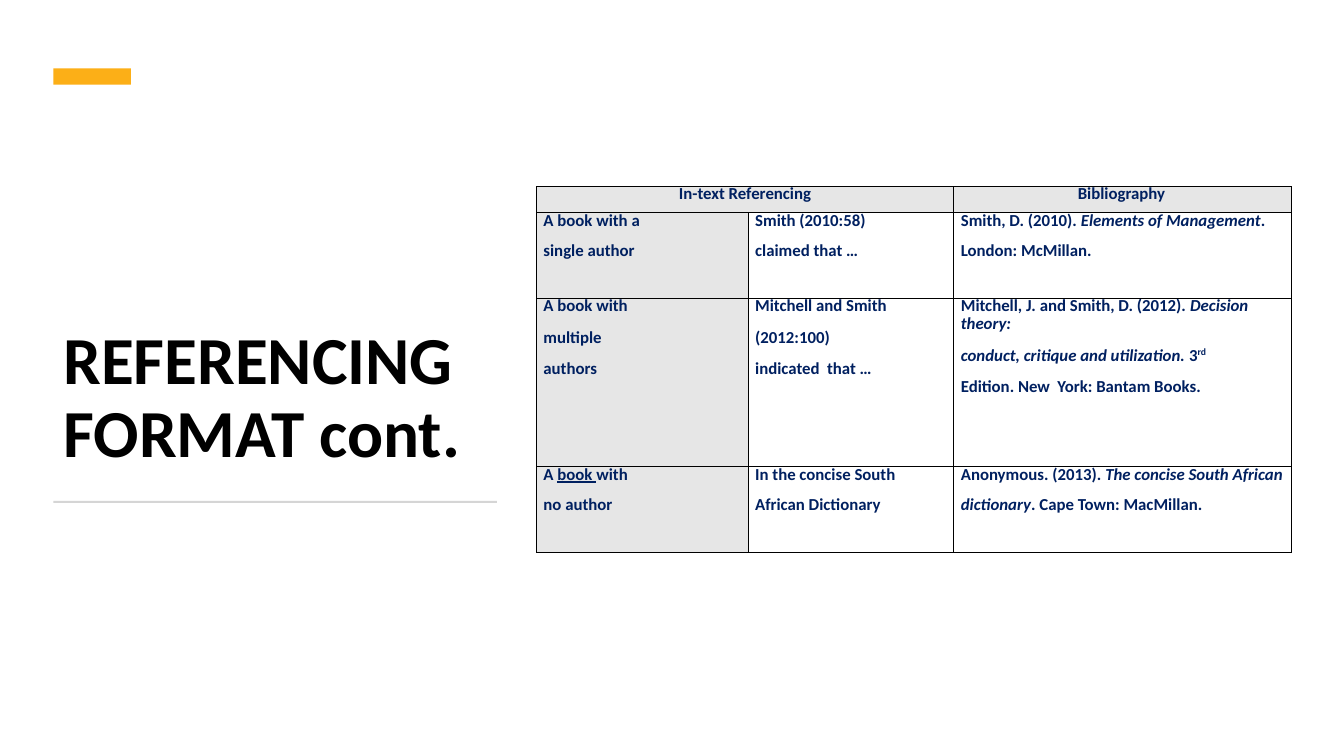
from lxml import etree
from pptx import Presentation
from pptx.dml.color import RGBColor
from pptx.enum.shapes import MSO_SHAPE as Shape
from pptx.enum.text import MSO_ANCHOR as Anchor, PP_ALIGN as Align
from pptx.oxml.ns import qn
from pptx.util import Inches, Pt

HUES = {"accent": "FCAF17", "rule": "D5D5D5", "title": "000000",
        "text": "002060", "shade": "E6E6E6", "edge": "000000"}
COLS = [2.1, 2.04, 3.35]
ROWS = [0.26, 0.85, 1.67, 0.85]
FIRST = {"line_spacing": Pt(12.8)}
NEXT = {"space_before": Pt(7)}
LOOSE = {"line_spacing": 1.53}
PAD = 0.07

# Each cell holds paragraphs; each paragraph holds (text, style) runs.
BODY = [
    [[[("A book with a", "")], [("single author", "")]],
     [[("Smith (2010:58)", "")], [("claimed that …", "")]],
     [[("Smith, D. (2010). ", ""), ("Elements of Management", "i"), (".", "")],
      [("London: McMillan.", "")]]],
    [[[("A book with", "")], [("multiple  authors", "")]],
     [[("Mitchell and Smith", "")], [("(2012:100) indicated  that …", "")]],
     [[("Mitchell, J. and Smith, D. (2012). ", ""), ("Decision theory:", "i")],
      [("conduct, critique and utilization. ", "i"), ("3", ""), ("rd ", "sup"),
       ("Edition. New  York: Bantam Books.", "")]]],
    [[[("A ", ""), ("book ", "u"), ("with", "")], [("no author", "")]],
     [[("In the concise South", "")], [("African Dictionary", "")]],
     [[("Anonymous. (2013). ", ""), ("The concise South African", "i")],
      [("dictionary", "i"), (". Cape Town: MacMillan.", "")]]],
]
# Right indents of the loosely spaced paragraphs, by column.
NARROW = [1.0, 0.6, 0.6]


def color(name):
    return RGBColor.from_string(HUES[name])


def apply(target, form):
    for key, value in form.items():
        setattr(target, key, value)


def add_bar(slide, box, hue):
    bar = slide.shapes.add_shape(Shape.RECTANGLE, *map(Inches, box))
    bar.shadow.inherit = False
    bar.fill.solid()
    bar.fill.fore_color.rgb = color(hue)
    bar.line.fill.background()


def add_run(para, text, style, size, hue):
    run = para.add_run()
    run.text = text
    apply(run.font, {"name": "Calibri", "size": Pt(size), "bold": True,
                     "italic": style == "i", "underline": style == "u"})
    run.font.color.rgb = color(hue)
    if style == "sup":
        run.font._element.set("baseline", "32000")


def add_title(slide, box):
    """Title block with the accent above and the rule below it."""
    left, top, width, height = box
    add_bar(slide, (left, top - 0.55, 0.77, 0.16), "accent")
    add_bar(slide, (left, top + height + 0.24, width, 0.02), "rule")
    frame = slide.shapes.add_textbox(*map(Inches, box)).text_frame
    apply(frame, {"word_wrap": True, "vertical_anchor": Anchor.BOTTOM})
    para = frame.paragraphs[0]
    apply(para, {"line_spacing": 0.9, "space_after": Pt(6)})
    add_run(para, "REFERENCING FORMAT cont.", "", 48, "title")


def style_cell(cell, shaded):
    apply(cell, dict.fromkeys(("margin_left", "margin_right",
                               "margin_top", "margin_bottom"), 0))
    if shaded:
        cell.fill.solid()
        cell.fill.fore_color.rgb = color("shade")
    else:
        cell.fill.background()
    props = cell._tc.get_or_add_tcPr()
    for spot, side in enumerate("LRTB"):
        edge = etree.Element(qn(f"a:ln{side}"), w=str(Pt(0.5)))
        fill = etree.SubElement(edge, qn("a:solidFill"))
        etree.SubElement(fill, qn("a:srgbClr"), val=HUES["edge"])
        props.insert(spot, edge)


def fill_para(para, runs, form, left=0, right=0):
    apply(para, form)
    props = para._p.get_or_add_pPr()
    props.set("marL", str(Inches(left)))
    props.set("marR", str(Inches(right)))
    props.set("indent", "0")
    for text, style in runs:
        add_run(para, text, style, 12, "text")


def add_grid(slide, left, top):
    grid = slide.shapes.add_table(
        len(ROWS), len(COLS), Inches(left), Inches(top),
        Inches(sum(COLS)), Inches(sum(ROWS))).table
    apply(grid, {"first_row": False, "horz_banding": False})
    for col, width in zip(grid.columns, COLS):
        col.width = Inches(width)
    for row, height in zip(grid.rows, ROWS):
        row.height = Inches(height)
    for r in range(len(ROWS)):
        for c in range(len(COLS)):
            style_cell(grid.cell(r, c), r == 0 or c == 0)

    grid.cell(0, 0).merge(grid.cell(0, 1))
    fill_para(grid.cell(0, 0).text_frame.paragraphs[0],
              [("In-text Referencing", "")],
              {**FIRST, "alignment": Align.CENTER})
    fill_para(grid.cell(0, 2).text_frame.paragraphs[0],
              [("Bibliography", "")], FIRST, 1.23)

    for r, line in enumerate(BODY, 1):
        for c, (head, tail) in enumerate(line):
            frame = grid.cell(r, c).text_frame
            fill_para(frame.paragraphs[0], head, FIRST, PAD)
            loose = r == 2
            fill_para(frame.add_paragraph(), tail, LOOSE if loose else NEXT,
                      PAD, NARROW[c] if loose else 0)


def main():
    deck = Presentation()
    apply(deck, {"slide_width": Inches(13.33), "slide_height": Inches(7.5)})
    slide = deck.slides.add_slide(deck.slide_layouts[6])
    add_title(slide, (0.53, 1.23, 4.4, 3.5))
    add_grid(slide, 5.32, 1.85)
    deck.save("out.pptx")


if __name__ == "__main__":
    main()
